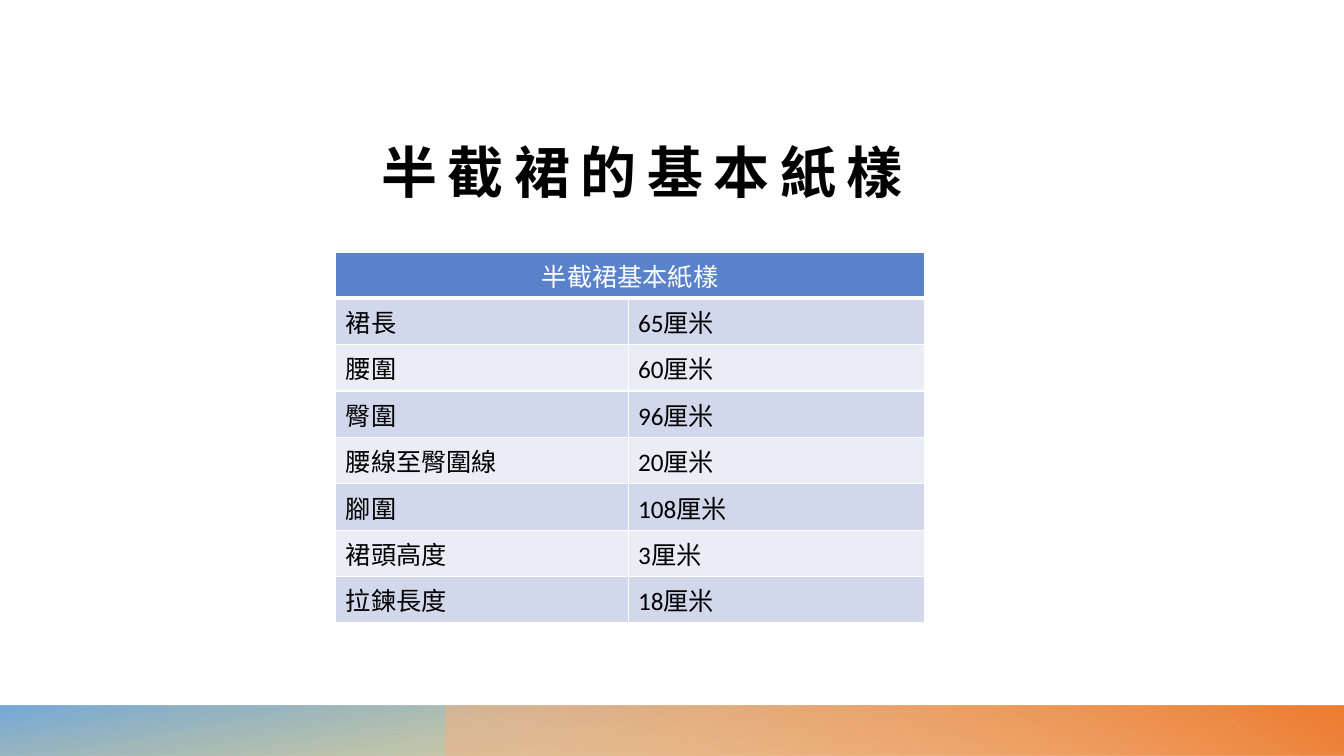
from lxml import etree
from pptx import Presentation
from pptx import util as u
from pptx.dml import color
from pptx.enum import lang, shapes, text
from pptx.oxml import ns

TITLE = "半截裙的基本紙樣"
TABLE_HEADING = "半截裙基本紙樣"
MEASUREMENTS = [
    ("裙長", "65厘米"),
    ("腰圍", "60厘米"),
    ("臀圍", "96厘米"),
    ("腰線至臀圍線", "20厘米"),
    ("腳圍", "108厘米"),
    ("裙頭高度", "3厘米"),
    ("拉鍊長度", "18厘米"),
]
FOOTER_BARS = [
    {"left": 0, "width": 13.33, "rotation": 180, "angle": 100,
     "stops": [(14, "CF9B00", 28), (100, "5B9BD5", 85)]},
    {"left": 4.42, "width": 8.92, "rotation": 0, "angle": 240,
     "stops": [(9, "F4B183", 55), (99, "ED7D31", 100)]},
]
TITLE_FONT = {"name": "Calibri", "size": u.Pt(40), "bold": True}
TABLE_FONT = {"name": "Calibri", "size": u.Pt(18), "bold": False}
HEADING_FILL = "5A82CB"
BAND_FILLS = ["D2D8EC", "EAEDF6"]
COLUMN_WIDTHS = [2.9, 2.94]
ROW_HEIGHT = 0.46


def rgb(value):
    return color.RGBColor.from_string(value)


def child(parent, tag, **attributes):
    element = etree.SubElement(parent, ns.qn(tag))
    for name, value in attributes.items():
        element.set(name, str(value))
    return element


def write(frame, words, font_values, hex_color, alignment):
    paragraph = frame.paragraphs[0]
    paragraph.alignment = alignment
    run = paragraph.add_run()
    run.text = words
    for name, value in font_values.items():
        setattr(run.font, name, value)
    run.font.color.rgb = rgb(hex_color)
    run.font.language_id = lang.MSO_LANGUAGE_ID.TRADITIONAL_CHINESE
    return run


def add_footer_bar(slide, bar):
    shape = slide.shapes.add_shape(
        shapes.MSO_SHAPE.RECTANGLE, u.Inches(bar["left"]), u.Inches(7),
        u.Inches(bar["width"]), u.Inches(0.5))
    shape.shadow.inherit = False
    shape.line.fill.background()
    shape.rotation = bar["rotation"]
    shape.fill.gradient()
    properties = shape._element.spPr
    properties.find(ns.qn("a:xfrm")).set("flipH", "1")
    gradient = properties.find(ns.qn("a:gradFill"))
    for element in list(gradient):
        gradient.remove(element)
    stop_list = child(gradient, "a:gsLst")
    for position, hex_color, opacity in bar["stops"]:
        stop = child(stop_list, "a:gs", pos=position * 1000)
        stop_color = child(stop, "a:srgbClr", val=hex_color)
        child(stop_color, "a:alpha", val=opacity * 1000)
    child(gradient, "a:lin", ang=bar["angle"] * 60000, scaled=0)


def add_title(slide):
    box = slide.shapes.add_textbox(
        u.Inches(0), u.Inches(1.3), u.Inches(12.74), u.Inches(0.8))
    frame = box.text_frame
    frame_format = {"word_wrap": True, "vertical_anchor": text.MSO_ANCHOR.MIDDLE,
                    "margin_left": 0, "margin_right": 0,
                    "margin_top": 0, "margin_bottom": 0}
    for name, value in frame_format.items():
        setattr(frame, name, value)
    run = write(frame, TITLE, TITLE_FONT, "000000", text.PP_ALIGN.CENTER)
    run.font._element.set("spc", "750")


def style_cell(cell, fill, border_widths):
    cell.fill.solid()
    cell.fill.fore_color.rgb = rgb(fill)
    properties = cell._tc.get_or_add_tcPr()
    for index, (side, width) in enumerate(border_widths.items()):
        line = child(properties, f"a:ln{side}", w=u.Pt(width))
        child(child(line, "a:solidFill"), "a:srgbClr", val="FFFFFF")
        properties.insert(index, line)


def add_measurement_table(slide):
    row_count = len(MEASUREMENTS) + 1
    table = slide.shapes.add_table(
        row_count, len(COLUMN_WIDTHS), u.Inches(3.33), u.Inches(2.5),
        u.Inches(sum(COLUMN_WIDTHS)), u.Inches(ROW_HEIGHT * row_count)).table
    for column, width in zip(table.columns, COLUMN_WIDTHS):
        column.width = u.Inches(width)
    for row_index, row in enumerate(table.rows):
        row.height = u.Inches(ROW_HEIGHT)
        fill = BAND_FILLS[(row_index - 1) % 2] if row_index else HEADING_FILL
        borders = {"L": 1, "R": 1, "T": 3 if row_index == 1 else 1,
                   "B": 1 if row_index else 3}
        for cell in row.cells:
            style_cell(cell, fill, borders)
    heading = table.cell(0, 0)
    heading.merge(table.cell(0, 1))
    write(heading.text_frame, TABLE_HEADING, TABLE_FONT, "FFFFFF",
          text.PP_ALIGN.CENTER)
    for row_index, measurement in enumerate(MEASUREMENTS, 1):
        for column_index, words in enumerate(measurement):
            write(table.cell(row_index, column_index).text_frame, words,
                  TABLE_FONT, "000000", text.PP_ALIGN.LEFT)


def main():
    presentation = Presentation()
    presentation.slide_width = u.Inches(13.33)
    presentation.slide_height = u.Inches(7.5)
    slide = presentation.slides.add_slide(presentation.slide_layouts[6])
    for bar in FOOTER_BARS:
        add_footer_bar(slide, bar)
    add_title(slide)
    add_measurement_table(slide)
    presentation.save("out.pptx")


if __name__ == "__main__":
    main()
